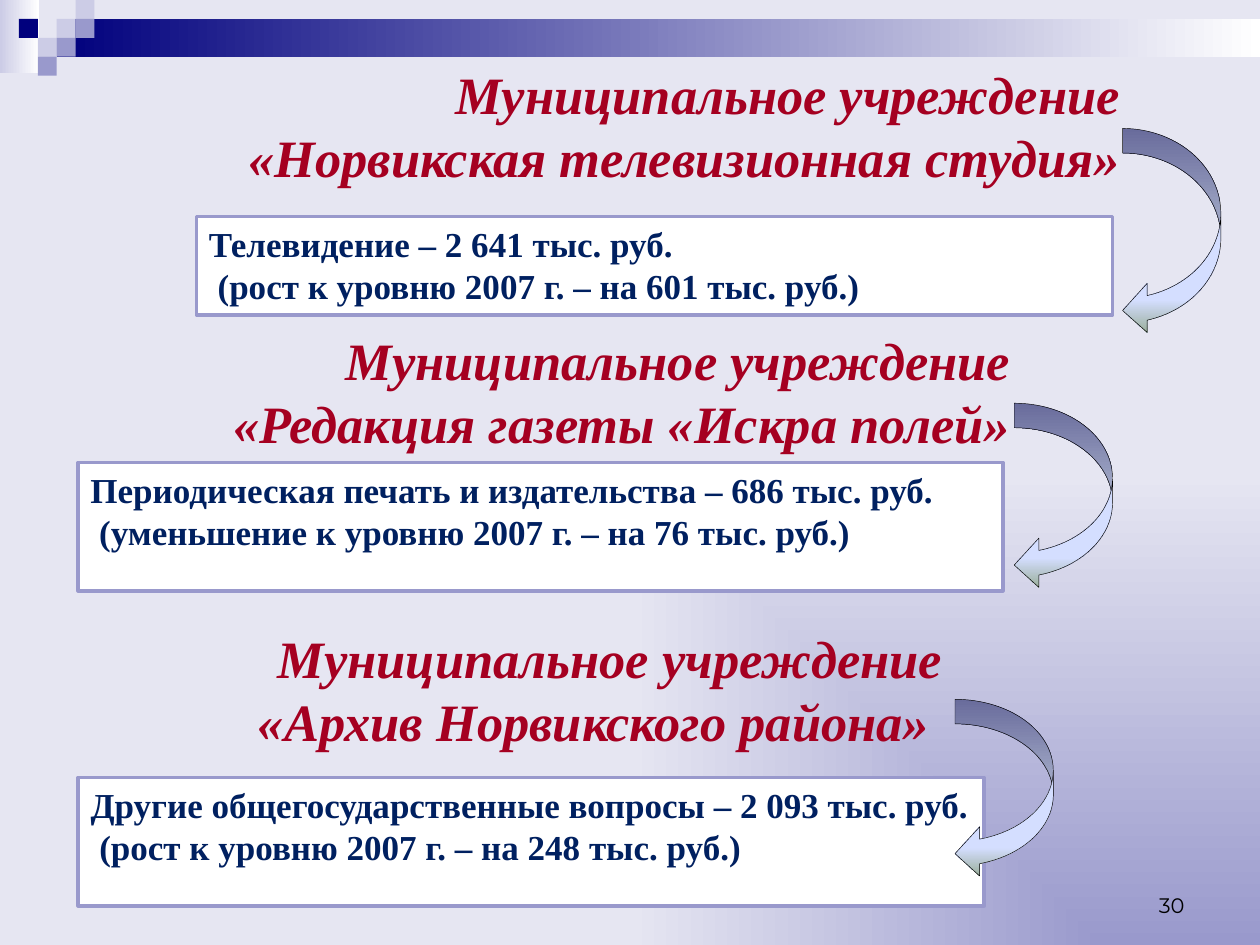
import pptx
import pptx.util
import pptx.dml.color
import pptx.enum.shapes
import pptx.enum.text
import pptx.oxml
import pptx.oxml.ns
from lxml import etree

Inches = pptx.util.Inches
Pt = pptx.util.Pt
RGBColor = pptx.dml.color.RGBColor
Shape = pptx.enum.shapes.MSO_SHAPE
Align = pptx.enum.text.PP_ALIGN
Anchor = pptx.enum.text.MSO_ANCHOR
qn = pptx.oxml.ns.qn

WHITE = RGBColor(0xFF, 0xFF, 0xFF)
BLACK = RGBColor(0, 0, 0)
NAVY = RGBColor(0, 0, 0x7D)
LAVENDER = RGBColor(0x99, 0x99, 0xCC)
PALE = RGBColor(0xCC, 0xCC, 0xE6)
MIST = RGBColor(0xE6, 0xE6, 0xF2)
CRIMSON = RGBColor(0xA5, 0x00, 0x21)
INK = RGBColor(0x00, 0x20, 0x60)
SLATE = RGBColor(0x84, 0x88, 0xC4)
SKY = RGBColor(0xD4, 0xDE, 0xFF)
SAGE = RGBColor(0x96, 0xAB, 0x94)

SERIF = "Times New Roman"
ARROW_STOPS = [(0, SLATE), (53, SKY), (83, SKY), (100, SAGE)]

BANDS = [
    ((0, 0, 0.31, 0.58), [(0, PALE), (100, WHITE)]),
    ((0.45, 0.15, 9.55, 0.3), [(0, NAVY), (100, WHITE)]),
]
TILE = 0.15
TILES = [
    (3, 1, PALE), (4, 0, PALE), (4, 1, LAVENDER), (2, 2, PALE),
    (1, 1, NAVY), (3, 2, LAVENDER), (2, 3, LAVENDER),
]
SECTIONS = [
    {
        "heading": "Муниципальное учреждение\v «Норвикская телевизионная студия»",
        "heading_at": (1.41, 0.55, 7.58, 0.88),
        "anchor": Anchor.MIDDLE,
        "lines": ["Телевидение – 2 641 тыс. руб.",
                  " (рост к уровню 2007 г. – на 601 тыс. руб.)"],
        "panel_at": (1.56, 1.72, 7.27, 0.78),
        "arrow_at": (8.91, 1.02, 0.78, 1.64),
    },
    {
        "heading": "Муниципальное учреждение\v «Редакция газеты «Искра полей»",
        "heading_at": (1.17, 2.66, 6.95, 0.88),
        "anchor": Anchor.MIDDLE,
        "lines": ["Периодическая печать и издательства – 686 тыс. руб.",
                  " (уменьшение к уровню 2007 г. – на 76 тыс. руб.)"],
        "panel_at": (0.62, 3.67, 7.34, 1.02),
        "arrow_at": (8.05, 3.2, 0.78, 1.48),
    },
    {
        "heading": "Муниципальное учреждение\v «Архив Норвикского района» ",
        "heading_at": (1.56, 4.92, 6.02, 1.11),
        "anchor": Anchor.TOP,
        "lines": ["Другие общегосударственные вопросы – 2 093 тыс. руб.",
                  " (рост к уровню 2007 г. – на 248 тыс. руб.)"],
        "panel_at": (0.62, 6.17, 7.19, 1.02),
        "arrow_at": (7.58, 5.55, 0.78, 1.42),
    },
]
PAGE_NUMBER = "30"
PAGE_NUMBER_AT = (7.17, 6.83, 2.33, 0.5)


def set_gradient(fill, owner, stops, angle=0):
    fill.gradient()
    gradient = owner.find(".//" + qn("a:gradFill"))
    stop_list = gradient.find(qn("a:gsLst"))
    for stop in list(stop_list):
        stop_list.remove(stop)
    for position, color in stops:
        stop = etree.SubElement(stop_list, qn("a:gs"), pos=str(position * 1000))
        etree.SubElement(stop, qn("a:srgbClr"), val=str(color))
    gradient.find(qn("a:lin")).set("ang", str(angle * 60000))
    return gradient


def set_background(page):
    gradient = set_gradient(page.background.fill, page.element,
                            [(0, LAVENDER), (100, MIST)])
    gradient.remove(gradient.find(qn("a:lin")))
    radial = etree.SubElement(gradient, qn("a:path"))
    radial.set("path", "rect")
    etree.SubElement(radial, qn("a:fillToRect"), l="100000", t="100000")


def add_shape(page, kind, at, color=None):
    shape = page.shapes.add_shape(kind, *map(Inches, at))
    shape.shadow.inherit = False
    shape.line.fill.background()
    if color is not None:
        shape.fill.solid()
        shape.fill.fore_color.rgb = color
    return shape


def write(shape, lines, size, color, font=SERIF, bold=False, italic=False,
          align=Align.LEFT, anchor=Anchor.TOP):
    frame = shape.text_frame
    frame.word_wrap = True
    frame.vertical_anchor = anchor
    frame.text = "\n".join(lines)
    for para in frame.paragraphs:
        para.alignment = align
        para.font.name = font
        para.font.size = Pt(size)
        para.font.bold = bold
        para.font.italic = italic
        para.font.color.rgb = color


def add_text(page, at, text, size, color, **style):
    box = page.shapes.add_textbox(*map(Inches, at))
    write(box, [text], size, color, align=Align.RIGHT, **style)


def add_panel(page, at, lines):
    panel = add_shape(page, Shape.RECTANGLE, at, WHITE)
    panel.line.color.rgb = LAVENDER
    panel.line.width = Pt(2)
    write(panel, lines, 20, INK, bold=True)


def add_arrow(page, at):
    arrow = add_shape(page, Shape.CURVED_RIGHT_ARROW, at)
    for index, value in enumerate((0.25, 0.5, 0.25)):
        arrow.adjustments[index] = value
    set_gradient(arrow.fill, arrow.element, ARROW_STOPS, 90)
    arrow.line.color.rgb = BLACK
    arrow.line.width = Pt(0.25)
    arrow.element.spPr.find(qn("a:xfrm")).set("flipH", "1")


def main():
    deck = pptx.Presentation()
    deck.slide_width, deck.slide_height = Inches(10), Inches(7.5)
    page = deck.slides.add_slide(deck.slide_layouts[6])
    set_background(page)
    for at, stops in BANDS:
        band = add_shape(page, Shape.RECTANGLE, at)
        set_gradient(band.fill, band.element, stops)
    for column, row, color in TILES:
        add_shape(page, Shape.RECTANGLE,
                  (column * TILE, row * TILE, TILE, TILE), color)
    for section in SECTIONS:
        add_text(page, section["heading_at"], section["heading"], 30, CRIMSON,
                 bold=True, italic=True, anchor=section["anchor"])
        add_panel(page, section["panel_at"], section["lines"])
        add_arrow(page, section["arrow_at"])
    add_text(page, PAGE_NUMBER_AT, PAGE_NUMBER, 12, BLACK,
             font="Montserrat", anchor=Anchor.BOTTOM)
    deck.save("out.pptx")


if __name__ == "__main__":
    main()
